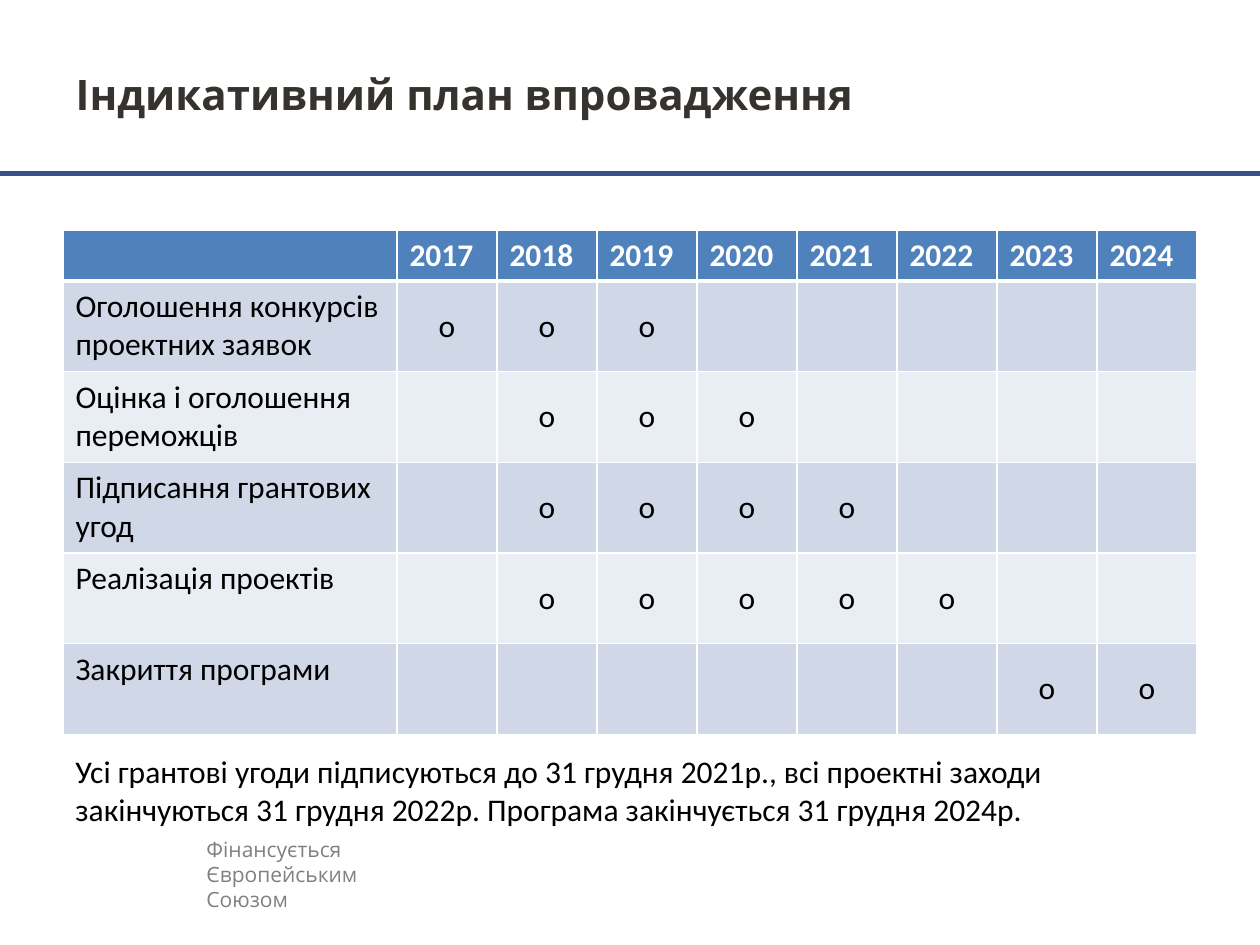
from lxml import etree
from pptx import Presentation
from pptx.dml.color import RGBColor
from pptx.enum import shapes, text
from pptx.oxml.ns import qn
from pptx.util import Inches, Pt

HUES = {
    "rule": "37518A", "title": "36322D", "grey": "808080", "head": "4F81BD",
    "odd": "D0D8E8", "even": "E9EDF4", "white": "FFFFFF", "black": "000000",
}
YEARS = range(2017, 2025)
# Each stage with its first and last marked year
PLAN = [
    ("Оголошення конкурсів проектних заявок", 2017, 2019),
    ("Оцінка і оголошення переможців", 2018, 2020),
    ("Підписання грантових угод", 2018, 2021),
    ("Реалізація проектів", 2018, 2022),
    ("Закриття програми", 2023, 2024),
]
BODY = {"name": "Calibri", "size": Pt(18), "bold": False}
HEAD = {**BODY, "bold": True}
TITLE = {"name": "Open Sans", "size": Pt(24), "bold": True}
FUND = {"name": "Open Sans", "size": Pt(12), "bold": False}


def hue(key):
    return RGBColor.from_string(HUES[key])


def style(para, form, color):
    for key, val in form.items():
        setattr(para.font, key, val)
    para.font.color.rgb = hue(color)


def place(shape, box):
    for key, val in zip(("left", "top", "width", "height"), box):
        setattr(shape, key, Inches(val))


def title(slide, box, words):
    shape = slide.shapes.title
    place(shape, box)
    frame = shape.text_frame
    frame.text = words
    frame.vertical_anchor = text.MSO_ANCHOR.MIDDLE
    para = frame.paragraphs[0]
    para.alignment = text.PP_ALIGN.LEFT
    style(para, TITLE, "title")


def rule(slide, left, top, width):
    line = slide.shapes.add_connector(
        shapes.MSO_CONNECTOR.STRAIGHT,
        Inches(left), Inches(top), Inches(left + width), Inches(top))
    line.line.color.rgb = hue("rule")
    line.line.width = Pt(3)
    etree.SubElement(line._element.spPr, qn("a:effectLst"))


def note(slide, box, words, form, color):
    frame = slide.shapes.add_textbox(*map(Inches, box)).text_frame
    frame.word_wrap = True
    frame.auto_size = text.MSO_AUTO_SIZE.SHAPE_TO_FIT_TEXT
    frame.text = words
    style(frame.paragraphs[0], form, color)


def edge(cell, sides):
    """Draw white borders; sides maps a side letter to points."""
    props = cell._tc.get_or_add_tcPr()
    for spot, (side, width) in enumerate(sides.items()):
        line = etree.Element(qn("a:ln" + side), w=str(Pt(width)))
        fill = etree.SubElement(line, qn("a:solidFill"))
        etree.SubElement(fill, qn("a:srgbClr"), val=HUES["white"])
        props.insert(spot, line)


def paint(cell, words, form, color, fill):
    cell.fill.solid()
    cell.fill.fore_color.rgb = hue(fill)
    cell.text = words
    style(cell.text_frame.paragraphs[0], form, color)


def grid(slide, box, first, top):
    """Timeline table: first column and header row sizes are given."""
    left, y, width, height = box
    count = len(YEARS)
    table = slide.shapes.add_table(
        len(PLAN) + 1, count + 1, *map(Inches, box)).table
    for i, col in enumerate(table.columns):
        col.width = Inches((width - first) / count if i else first)
    for i, row in enumerate(table.rows):
        row.height = Inches((height - top) / len(PLAN) if i else top)

    # Header of years
    for i, words in enumerate(["", *map(str, YEARS)]):
        cell = table.cell(0, i)
        paint(cell, words, HEAD, "white", "head")
        edge(cell, {"L": 1, "R": 1, "T": 1, "B": 3})

    # Stages and their marks
    for r, (stage, start, end) in enumerate(PLAN, 1):
        marks = ["о" if start <= year <= end else "" for year in YEARS]
        for c, words in enumerate([stage, *marks]):
            cell = table.cell(r, c)
            paint(cell, words, BODY, "black", "odd" if r % 2 else "even")
            edge(cell, {"L": 1, "R": 1, "T": 3 if r == 1 else 1, "B": 1})
            if c:
                cell.vertical_anchor = text.MSO_ANCHOR.MIDDLE
                cell.text_frame.paragraphs[0].alignment = text.PP_ALIGN.CENTER


def main():
    deck = Presentation()
    deck.slide_width, deck.slide_height = Inches(10), Inches(7.5)
    slide = deck.slides.add_slide(deck.slide_layouts[5])
    rule(slide, 0, 1.38, 10)
    note(slide, (1.54, 6.59, 1.85, 0.71),
         "Фінансується Європейським Союзом", FUND, "grey")
    title(slide, (0.5, 0.39, 7.29, 0.71), "Індикативний план впровадження")
    grid(slide, (0.5, 1.83, 9, 3.99), 2.65, 0.39)
    note(slide, (0.5, 5.92, 9.01, 0.71),
         "Усі грантові угоди підписуються до 31 грудня 2021р., всі проектні "
         "заходи закінчуються 31 грудня 2022р. Програма закінчується "
         "31 грудня 2024р.", BODY, "black")
    deck.save("out.pptx")


if __name__ == "__main__":
    main()
